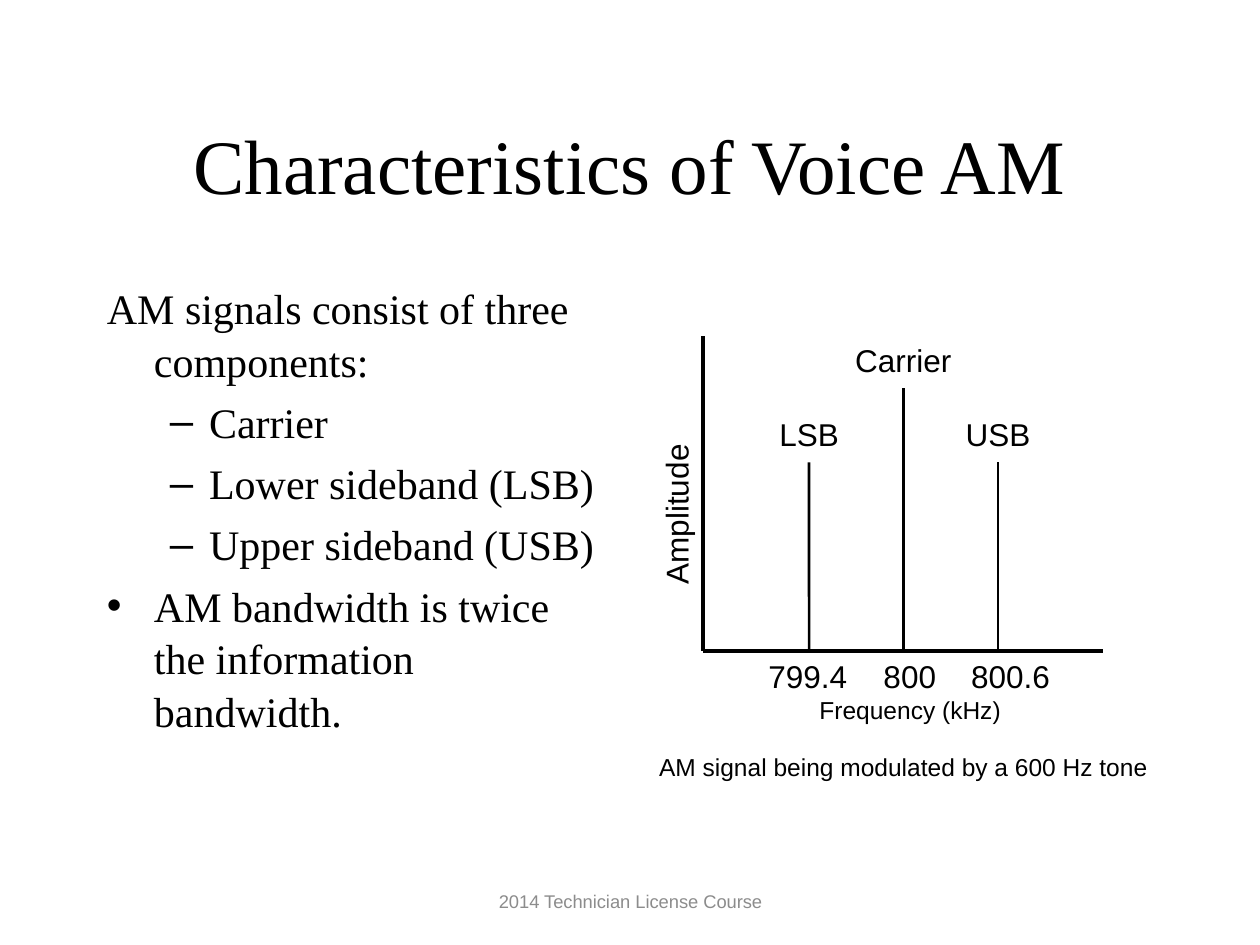
"""Build the slide on the characteristics of voice AM."""
from lxml.etree import SubElement
from pptx import Presentation
from pptx.dml.color import RGBColor
from pptx.enum.shapes import MSO_CONNECTOR
from pptx.enum.text import MSO_ANCHOR as Anchor, MSO_AUTO_SIZE as AutoSize, PP_ALIGN as Align
from pptx.oxml.ns import qn
from pptx.util import Cm, Pt

BLACK = RGBColor(0x00, 0x00, 0x00)
GREY = RGBColor(0x8C, 0x8C, 0x8C)


class SlideBuilder:
    serif = "Times New Roman"
    sans = "Arial"

    def __init__(self, deck):
        self.slide = deck.slides.add_slide(deck.slide_layouts[1])
        self.shapes = self.slide.shapes

    def style(self, paragraph, size, face, color=BLACK, align=None):
        paragraph.alignment = align
        font = paragraph.font
        font.size, font.name = Pt(size), face
        font.color.rgb = color

    def place(self, shape, left, top, width, height):
        shape.left, shape.top = Cm(left), Cm(top)
        shape.width, shape.height = Cm(width), Cm(height)

    def title(self, text, box):
        title = self.shapes.title
        self.place(title, *box)
        frame = title.text_frame
        frame.text = text
        frame.auto_size = AutoSize.NONE
        frame.vertical_anchor = Anchor.MIDDLE
        self.style(frame.paragraphs[0], 44, self.serif, align=Align.CENTER)

    def body(self, items, box):
        body = self.slide.placeholders[1]
        self.place(body, *box)
        frame = body.text_frame
        frame.text = "\n".join(text for text, _, _ in items)
        frame.auto_size = AutoSize.NONE
        for paragraph, (_, level, bullet) in zip(frame.paragraphs, items):
            paragraph.level = level
            margin, hanging = ((0.95, 0.95), (2.06, 0.79))[level]
            properties = paragraph._p.get_or_add_pPr()
            properties.set("marL", str(Cm(margin)))
            properties.set("indent", str(-Cm(hanging)))
            if bullet:
                SubElement(properties, qn("a:buChar")).set("char", bullet)
            else:
                SubElement(properties, qn("a:buNone"))
            paragraph.line_spacing = 1.05
            self.style(paragraph, 24, self.serif)
        frame.paragraphs[0].space_before = Pt(0)

    def label(self, text, box, size=18, color=BLACK, wrap=False, anchor=Anchor.TOP):
        label = self.shapes.add_textbox(*map(Cm, box))
        frame = label.text_frame
        frame.word_wrap = wrap
        frame.vertical_anchor = anchor
        frame.text = text
        self.style(frame.paragraphs[0], size, self.sans, color, Align.CENTER)
        return label

    def frequency_scale(self, values, stops, caption, box):
        scale = self.label("\t".join(values), box, wrap=True)
        ticks = scale.text_frame.paragraphs[0]
        properties = ticks._p.get_or_add_pPr()
        properties.remove(properties.find(qn("a:defRPr")))
        tabs = SubElement(properties, qn("a:tabLst"))
        for stop in stops:
            tab = SubElement(tabs, qn("a:tab"))
            tab.set("pos", str(Cm(stop)))
            tab.set("algn", "ctr")
        self.style(ticks, 18, self.sans, align=Align.LEFT)
        unit = scale.text_frame.add_paragraph()
        unit.text = caption
        self.style(unit, 14, self.sans, align=Align.CENTER)

    def line(self, start, end, weight, shapes=None):
        line = (shapes or self.shapes).add_connector(
            MSO_CONNECTOR.STRAIGHT, *map(Cm, (*start, *end)))
        line.line.color.rgb = BLACK
        line.line.width = Pt(weight)
        SubElement(line._element.spPr, qn("a:effectLst"))
        return line

    def axes(self, origin, top, right):
        group = self.shapes.add_group_shape()
        self.line((origin[0], top), origin, 2.25, group.shapes)
        self.line((right, origin[1]), origin, 2.25, group.shapes)

    def peak(self, name, center, top, width, baseline):
        height = 1.07
        label = self.label(name, (center - width / 2, top - height, width, height))
        self.line((center, baseline), (center, top), 1.5).end_connect(label, 2)


def main():
    deck = Presentation()
    deck.slide_width, deck.slide_height = Cm(25.4), Cm(19.05)
    builder = SlideBuilder(deck)
    builder.title("Characteristics of Voice AM", (1.9, 1.7, 21.59, 3.18))
    builder.body([
        ("AM signals consist of three components:", 0, None),
        ("Carrier", 1, "–"),
        ("Lower sideband (LSB)", 1, "–"),
        ("Upper sideband (USB)", 1, "–"),
        ("AM bandwidth is twice the information bandwidth.", 0, "•"),
    ], (1.9, 5.51, 10.59, 11.43))
    builder.label("2014 Technician License Course", (8.69, 17.65, 8.05, 1.02),
                  10.5, GREY, True, Anchor.MIDDLE)
    builder.label("AM signal being modulated by a 600 Hz tone",
                  (12.5, 15.04, 11.43, 0.86), 14, wrap=True)

    baseline = 13.13
    builder.axes((14.17, baseline), 6.78, 22.23)
    for name, center, top, width in (
            ("LSB", 16.31, 9.32, 1.73),
            ("Carrier", 18.21, 7.82, 2.46),
            ("USB", 20.12, 9.32, 1.83)):
        builder.peak(name, center, top, width, baseline)
    builder.frequency_scale(("799.4", "800", "800.6"), (2.85, 4.88),
                            "Frequency (kHz)", (15.24, baseline, 6.22, 1.63))
    amplitude = builder.label("Amplitude", (11.96, 9.86, 3.35, 1.02))
    amplitude.rotation = 270
    deck.save("out.pptx")


if __name__ == "__main__":
    main()
